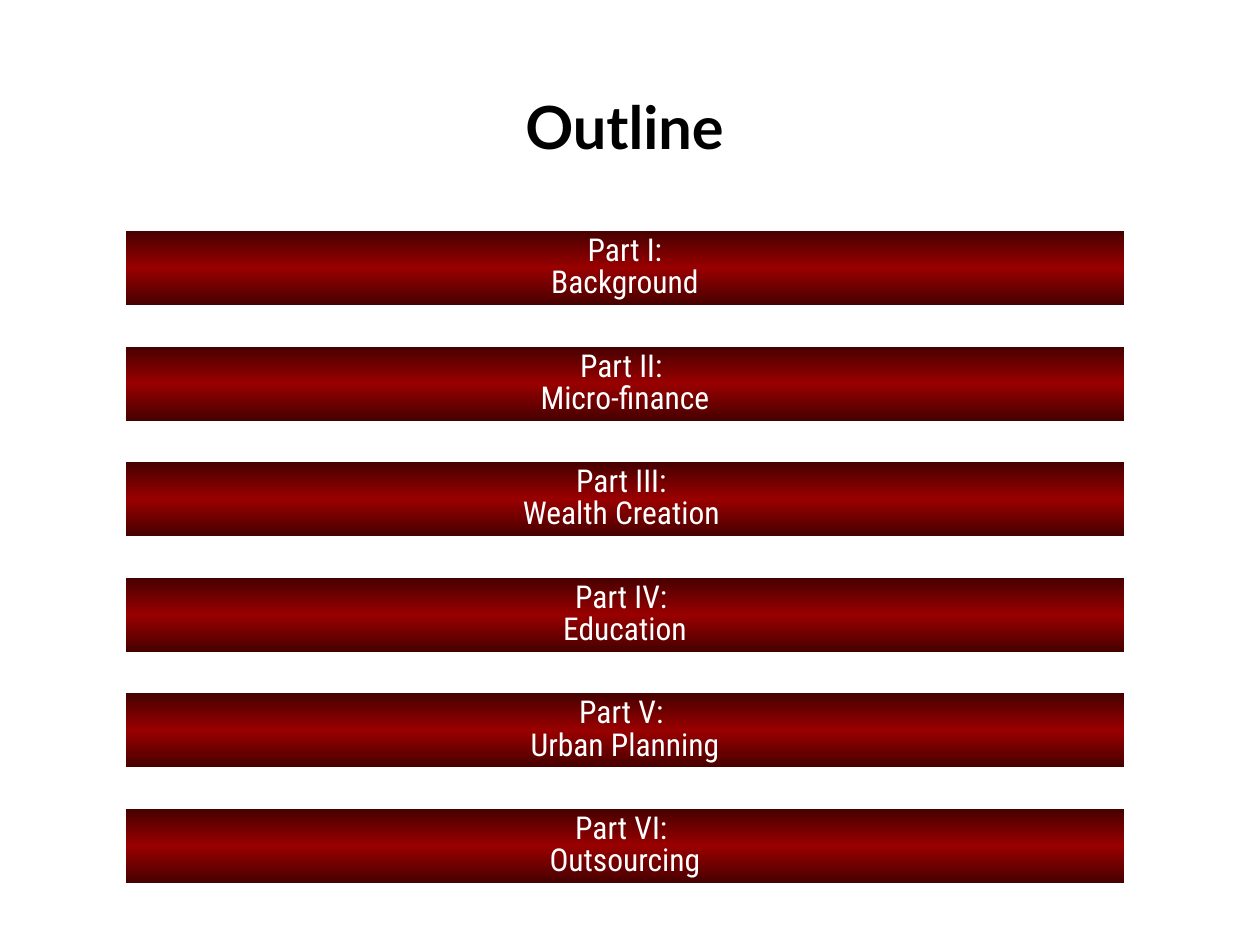
import copy

import pptx
import pptx.dml.color
import pptx.enum.shapes
import pptx.enum.text
import pptx.util

TITLE = "Outline"
PARTS = [
    "Part I:\nBackground",
    "Part II: \vMicro-finance",
    "Part III: \vWealth Creation ",
    "Part IV: \vEducation",
    "Part V: \vUrban Planning",
    "Part VI: \vOutsourcing",
]
COLORS = {"edge": "470000", "middle": "990000", "title": "000000", "label": "FFFFFF"}
TITLE_FONT = {"name": "Lato", "size": pptx.util.Pt(34), "bold": True}
LABEL_FONT = {"name": "Roboto Condensed", "size": pptx.util.Pt(18), "bold": False}

PX = 914400 / 126
SLIDE_SIZE = (1260, 945)
TITLE_BOX = (136, 73, 977, 105)
BAR_LEFT, BAR_WIDTH, BAR_HEIGHT = 126, 998, 74
FIRST_TOP, LAST_TOP = 231, 809


def emu(*lengths):
    return [round(length * PX) for length in lengths]


def color(name):
    return pptx.dml.color.RGBColor.from_string(COLORS[name])


def write(shape, text, font, color_name, line_spacing):
    frame = shape.text_frame
    frame.word_wrap = True
    frame.vertical_anchor = pptx.enum.text.MSO_ANCHOR.MIDDLE
    frame.text = text
    for paragraph in frame.paragraphs:
        paragraph.alignment = pptx.enum.text.PP_ALIGN.CENTER
        paragraph.line_spacing = line_spacing
        for run in paragraph.runs:
            for key, value in font.items():
                setattr(run.font, key, value)
            run.font.color.rgb = color(color_name)


def fill_with_gradient(shape):
    fill = shape.fill
    fill.gradient()
    fill.gradient_angle = 90
    stop_list = shape.element.spPr.find(".//" + pptx.oxml.ns.qn("a:gsLst"))
    stop_list.insert(1, copy.deepcopy(stop_list[0]))
    for stop, name, position in zip(fill.gradient_stops, ("edge", "middle", "edge"), (0, 0.5, 1)):
        stop.color.rgb = color(name)
        stop.position = position


def add_bar(slide, top, text):
    bar = slide.shapes.add_shape(
        pptx.enum.shapes.MSO_SHAPE.RECTANGLE, *emu(BAR_LEFT, top, BAR_WIDTH, BAR_HEIGHT)
    )
    bar.shadow.inherit = False
    bar.line.fill.background()
    fill_with_gradient(bar)
    write(bar, text, LABEL_FONT, "label", 0.85)


def main():
    presentation = pptx.Presentation()
    presentation.slide_width, presentation.slide_height = emu(*SLIDE_SIZE)
    slide = presentation.slides.add_slide(presentation.slide_layouts[6])
    write(slide.shapes.add_textbox(*emu(*TITLE_BOX)), TITLE, TITLE_FONT, "title", 1.0)
    step = (LAST_TOP - FIRST_TOP) / (len(PARTS) - 1)
    for index, text in enumerate(PARTS):
        add_bar(slide, FIRST_TOP + index * step, text)
    presentation.save("out.pptx")


if __name__ == "__main__":
    main()
